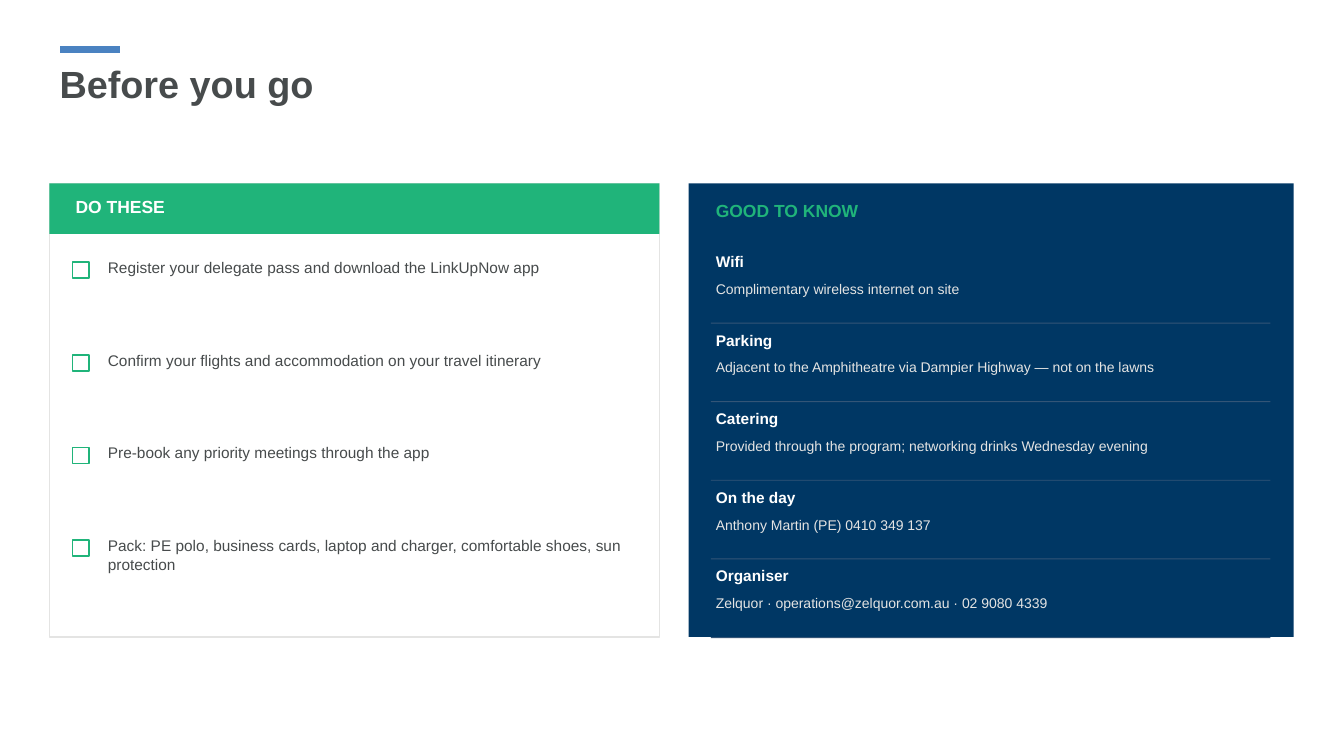
from dataclasses import dataclass

from lxml.etree import SubElement
from pptx import Presentation
from pptx.dml.color import RGBColor
from pptx.enum.shapes import MSO_CONNECTOR as Connector, MSO_SHAPE as Shape
from pptx.enum.text import MSO_ANCHOR as Anchor, MSO_AUTO_SIZE as AutoSize, PP_ALIGN as Align
from pptx.oxml.ns import qn
from pptx.util import Inches, Pt


@dataclass(frozen=True)
class Theme:
    font: str = "Arial"
    white: str = "FFFFFF"
    ink: str = "474B4C"
    blue: str = "4A82C1"
    green: str = "20B47A"
    navy: str = "003764"
    pale: str = "E4E4E3"
    divider: str = "335577"
    title_size: float = 27
    heading_size: float = 12.5
    body_size: float = 11
    detail_size: float = 10


THEME = Theme()

TASKS = [
    "Register your delegate pass and download the LinkUpNow app",
    "Confirm your flights and accommodation on your travel itinerary",
    "Pre-book any priority meetings through the app",
    "Pack: PE polo, business cards, laptop and charger, comfortable shoes, sun protection",
]

FACTS = [
    ("Wifi", "Complimentary wireless internet on site"),
    ("Parking", "Adjacent to the Amphitheatre via Dampier Highway — not on the lawns"),
    ("Catering", "Provided through the program; networking drinks Wednesday evening"),
    ("On the day", "Anthony Martin (PE) 0410 349 137"),
    ("Organiser", "Zelquor · operations@zelquor.com.au · 02 9080 4339"),
]

PANEL_TOP, PANEL_HEIGHT = 1.82, 4.5
TASK_TOP, TASK_STEP = 2.54, 0.92
FACT_LEFT, FACT_TOP, FACT_STEP = 7.05, 2.48, 0.78


def style_paragraph(para, size, color, bold=False):
    font = para.font
    font.name = THEME.font
    font.size = Pt(size)
    font.bold = bold
    font.color.rgb = RGBColor.from_string(color)


def add_rect(page, left, top, width, height, fill, line=None, line_width=0.75):
    rect = page.shapes.add_shape(
        Shape.RECTANGLE, Inches(left), Inches(top), Inches(width), Inches(height))
    rect.shadow.inherit = False
    rect.fill.solid()
    rect.fill.fore_color.rgb = RGBColor.from_string(fill)
    if line:
        rect.line.color.rgb = RGBColor.from_string(line)
        rect.line.width = Pt(line_width)
    else:
        rect.line.fill.background()


def add_text(page, left, top, width, height, text, size, color, bold=False):
    box = page.shapes.add_textbox(Inches(left), Inches(top), Inches(width), Inches(height))
    frame = box.text_frame
    frame.word_wrap = True
    frame.auto_size = AutoSize.SHAPE_TO_FIT_TEXT
    frame.margin_left = frame.margin_right = Inches(0.05)
    frame.margin_top = frame.margin_bottom = Inches(0.02)
    frame.text = text
    style_paragraph(frame.paragraphs[0], size, color, bold)


def add_title(page, text):
    # Accent bar above the title
    bar = page.shapes.add_connector(
        Connector.STRAIGHT, Inches(0.6), Inches(0.49), Inches(1.19), Inches(0.49))
    bar.line.color.rgb = RGBColor.from_string(THEME.blue)
    bar.line.width = Pt(4.5)
    SubElement(bar._element.spPr, qn("a:effectLst"))

    title = page.shapes.title
    title.left, title.top = Inches(0.49), Inches(0.38)
    title.width, title.height = Inches(10.55), Inches(0.84)
    frame = title.text_frame
    frame.auto_size = AutoSize.NONE
    frame.vertical_anchor = Anchor.MIDDLE
    frame.text = text
    para = frame.paragraphs[0]
    para.alignment = Align.LEFT
    para.line_spacing = 1.1
    style_paragraph(para, THEME.title_size, THEME.ink, bold=True)


def add_checklist(page, heading, tasks):
    # Panel and its header band
    add_rect(page, 0.49, PANEL_TOP, 6.05, PANEL_HEIGHT, THEME.white, THEME.pale)
    add_rect(page, 0.49, PANEL_TOP, 6.05, 0.5, THEME.green)
    add_text(page, 0.7, 1.92, 5.6, 0.32, heading, THEME.heading_size, THEME.white, bold=True)

    # Tick boxes with their tasks
    for index, task in enumerate(tasks):
        top = TASK_TOP + index * TASK_STEP
        add_rect(page, 0.72, top + 0.06, 0.16, 0.16, THEME.white, THEME.green, 1.25)
        add_text(page, 1.02, top, 5.4, 0.8, task, THEME.body_size, THEME.ink)


def add_fact_panel(page, heading, facts):
    add_rect(page, 6.83, PANEL_TOP, 6, PANEL_HEIGHT, THEME.navy)
    add_text(page, FACT_LEFT, 1.96, 5.6, 0.32, heading,
             THEME.heading_size, THEME.green, bold=True)

    # Label, detail and divider for each fact
    for index, (label, detail) in enumerate(facts):
        top = FACT_TOP + index * FACT_STEP
        add_text(page, FACT_LEFT, top, 5.6, 0.28, label,
                 THEME.body_size, THEME.white, bold=True)
        add_text(page, FACT_LEFT, top + 0.28, 5.6, 0.44, detail,
                 THEME.detail_size, THEME.pale)
        add_rect(page, FACT_LEFT, top + 0.72, 5.55, 0.01, THEME.divider)


def main():
    deck = Presentation()
    deck.slide_width, deck.slide_height = Inches(13.33), Inches(7.5)
    page = deck.slides.add_slide(deck.slide_layouts.get_by_name("Title Only"))
    add_title(page, "Before you go")
    add_checklist(page, "DO THESE", TASKS)
    add_fact_panel(page, "GOOD TO KNOW", FACTS)
    deck.save("out.pptx")


if __name__ == "__main__":
    main()
